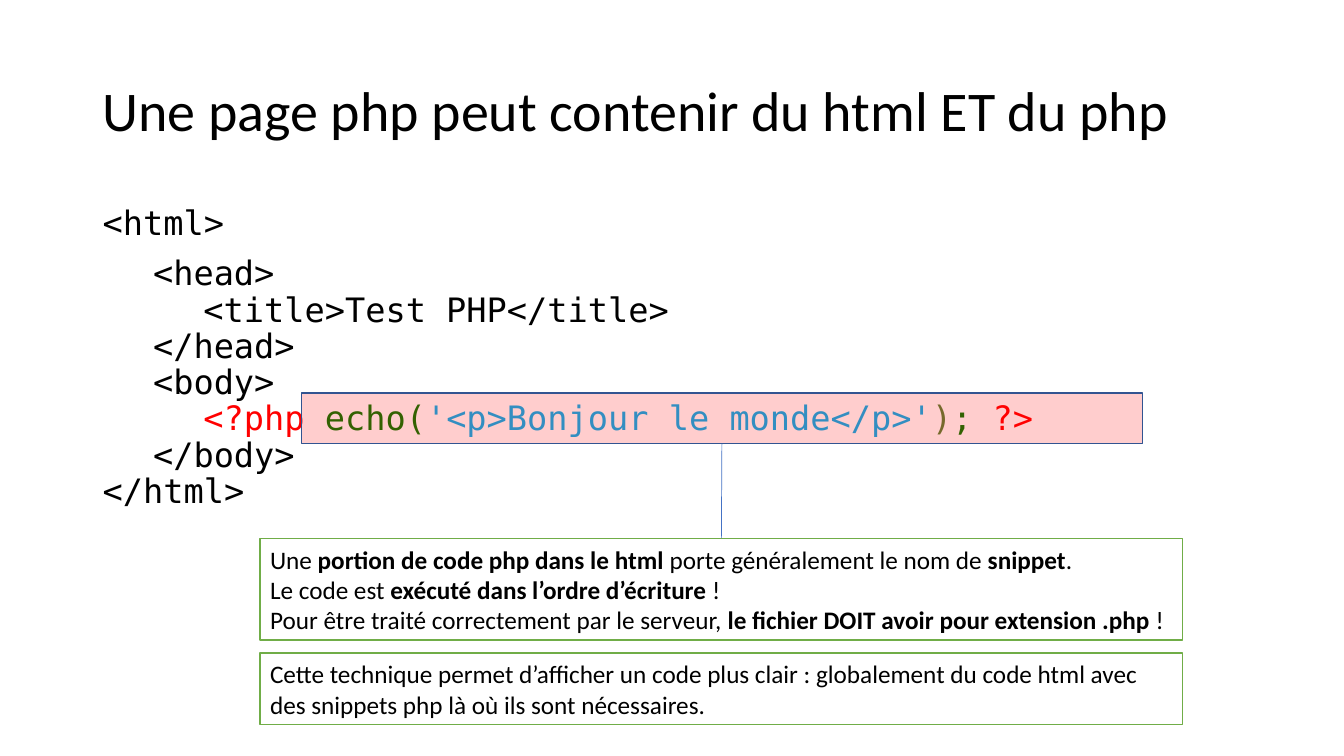
import dataclasses
import typing

import lxml.etree
import pptx
import pptx.dml.color
import pptx.enum.shapes
import pptx.enum.text
import pptx.oxml.ns
import pptx.util

Inches = pptx.util.Inches
Pt = pptx.util.Pt
ANCHOR = pptx.enum.text.MSO_ANCHOR
AUTO_SIZE = pptx.enum.text.MSO_AUTO_SIZE
RECTANGLE = pptx.enum.shapes.MSO_SHAPE.RECTANGLE
STRAIGHT = pptx.enum.shapes.MSO_CONNECTOR.STRAIGHT


@dataclasses.dataclass(frozen=True)
class Theme:
    """Colours, fonts and type sizes of the slide."""

    ink: str = "000000"
    paper: str = "FFFFFF"
    php_tag: str = "FF0000"
    php_call: str = "007700"
    php_string: str = "00B0F0"
    php_bracket: str = "548235"
    note_border: str = "70AD47"
    highlight: str = "FF0909"
    highlight_border: str = "325491"
    highlight_alpha: int = 20
    link: str = "4472C4"
    prose_font: str = "Calibri"
    code_font: str = "DejaVu Sans Mono"
    title_size: int = 40
    code_size: int = 24
    note_size: int = 18


THEME = Theme()


class Span(typing.NamedTuple):
    """A stretch of text in one colour and weight."""

    text: str
    color: str = THEME.ink
    bold: bool = False


class Area(typing.NamedTuple):
    """Left, top, width and height in inches."""

    left: float
    top: float
    width: float
    height: float


@dataclasses.dataclass(frozen=True)
class TextStyle:
    """Type and spacing shared by the paragraphs of one text."""

    font: str
    size: int
    para_format: dict[str, typing.Any] = dataclasses.field(default_factory=dict)


@dataclasses.dataclass(frozen=True)
class Note:
    """A framed explanation under the code."""

    area: Area
    paras: list[list[Span]]


TITLE_STYLE = TextStyle(THEME.prose_font, THEME.title_size, {"line_spacing": 0.9})
CODE_STYLE = TextStyle(
    THEME.code_font, THEME.code_size, {"line_spacing": 0.9, "space_before": Pt(10)}
)
NOTE_STYLE = TextStyle(THEME.prose_font, THEME.note_size)

TITLE_AREA = Area(0.92, 0.4, 11.5, 1.45)
CODE_AREA = Area(0.92, 2, 11.5, 3.19)
SNIPPET_AREA = Area(2.99, 3.9, 8.34, 0.5)

TITLE = [[Span("Une page php peut contenir du html ET du php")]]
CODE = [
    [Span("<html>")],
    [
        Span("\t<head>\n\t\t<title>Test PHP</title>\n\t</head>\n\t<body>\n\t\t"),
        Span("<?php ", THEME.php_tag),
        Span("echo(", THEME.php_call),
        Span("'<p>Bonjour le monde</p>'", THEME.php_string),
        Span(")", THEME.php_bracket),
        Span("; ", THEME.php_call),
        Span("?>", THEME.php_tag),
        Span("\n\t</body>\n</html>"),
    ],
]
SNIPPET_NOTE = Note(
    Area(2.58, 5.34, 9.15, 1.01),
    [
        [
            Span("Une "),
            Span("portion de code php dans le html", bold=True),
            Span(" porte généralement le nom de "),
            Span("snippet", bold=True),
            Span("."),
        ],
        [
            Span("Le code est "),
            Span("exécuté dans l’ordre d’écriture", bold=True),
            Span(" !"),
        ],
        [
            Span("Pour être traité correctement par le serveur, "),
            Span("le fichier DOIT avoir pour extension .php", bold=True),
            Span(" !"),
        ],
    ],
)
CLARITY_NOTE = Note(
    Area(2.58, 6.48, 9.15, 0.71),
    [
        [
            Span(
                "Cette technique permet d’afficher un code plus clair : globalement "
                "du code html avec des snippets php là où ils sont nécessaires."
            )
        ]
    ],
)


def rgb(color: str) -> pptx.dml.color.RGBColor:
    """Turn a hex string into a colour."""
    return pptx.dml.color.RGBColor.from_string(color)


def apply_format(target: typing.Any, values: dict[str, typing.Any]) -> None:
    """Set every named attribute on the target."""
    for name, value in values.items():
        setattr(target, name, value)


def write_text(frame: typing.Any, paras: list[list[Span]], style: TextStyle) -> None:
    """Fill a text frame with styled paragraphs."""
    for index, spans in enumerate(paras):
        para = frame.add_paragraph() if index else frame.paragraphs[0]
        left = pptx.enum.text.PP_ALIGN.LEFT
        apply_format(para, {"alignment": left, **style.para_format})
        for span in spans:
            for number, line in enumerate(span.text.split("\n")):
                if number:
                    para.add_line_break()
                if line:
                    run = para.add_run()
                    run.text = line
                    font = {"name": style.font, "size": Pt(style.size), "bold": span.bold}
                    apply_format(run.font, font)
                    run.font.color.rgb = rgb(span.color)


def add_text(
    page: typing.Any, area: Area, paras: list[list[Span]], style: TextStyle, anchor: ANCHOR
) -> None:
    """Add a wrapping text box."""
    frame = page.shapes.add_textbox(*map(Inches, area)).text_frame
    apply_format(frame, {"word_wrap": True, "vertical_anchor": anchor})
    write_text(frame, paras, style)


def add_box(page: typing.Any, area: Area, fill: str, border: str) -> typing.Any:
    """Add a flat rectangle with a thin border."""
    box = page.shapes.add_shape(RECTANGLE, *map(Inches, area))
    box.shadow.inherit = False
    box.fill.solid()
    box.fill.fore_color.rgb = rgb(fill)
    box.line.color.rgb = rgb(border)
    box.line.width = Pt(1)
    return box


def add_note(page: typing.Any, note: Note) -> typing.Any:
    """Add a framed note."""
    box = add_box(page, note.area, THEME.paper, THEME.note_border)
    frame = {"word_wrap": True, "auto_size": AUTO_SIZE.SHAPE_TO_FIT_TEXT}
    apply_format(box.text_frame, frame)
    write_text(box.text_frame, note.paras, NOTE_STYLE)
    return box


def add_highlight(page: typing.Any) -> typing.Any:
    """Add the translucent marker over the snippet."""
    box = add_box(page, SNIPPET_AREA, THEME.highlight, THEME.highlight_border)
    qn = pptx.oxml.ns.qn
    color = box.fill._xPr.find(qn("a:solidFill")).find(qn("a:srgbClr"))
    lxml.etree.SubElement(color, qn("a:alpha"), val=str(THEME.highlight_alpha * 1000))
    return box


def add_link(page: typing.Any, upper: typing.Any, lower: typing.Any) -> None:
    """Join the bottom of one box to the top of another."""
    link = page.shapes.add_connector(STRAIGHT, 0, 0, 0, 0)
    link.begin_connect(upper, 2)
    link.end_connect(lower, 0)
    link.line.color.rgb = rgb(THEME.link)
    link.line.width = Pt(0.5)
    lxml.etree.SubElement(link._element.spPr, pptx.oxml.ns.qn("a:effectLst"))


def main() -> None:
    """Build and save the slide."""
    deck = pptx.Presentation()
    apply_format(deck, {"slide_width": Inches(13.33), "slide_height": Inches(7.5)})
    page = deck.slides.add_slide(deck.slide_layouts[6])
    add_text(page, TITLE_AREA, TITLE, TITLE_STYLE, ANCHOR.MIDDLE)
    add_text(page, CODE_AREA, CODE, CODE_STYLE, ANCHOR.TOP)
    snippet_note = add_note(page, SNIPPET_NOTE)
    add_link(page, add_highlight(page), snippet_note)
    add_note(page, CLARITY_NOTE)
    deck.save("out.pptx")


if __name__ == "__main__":
    main()
